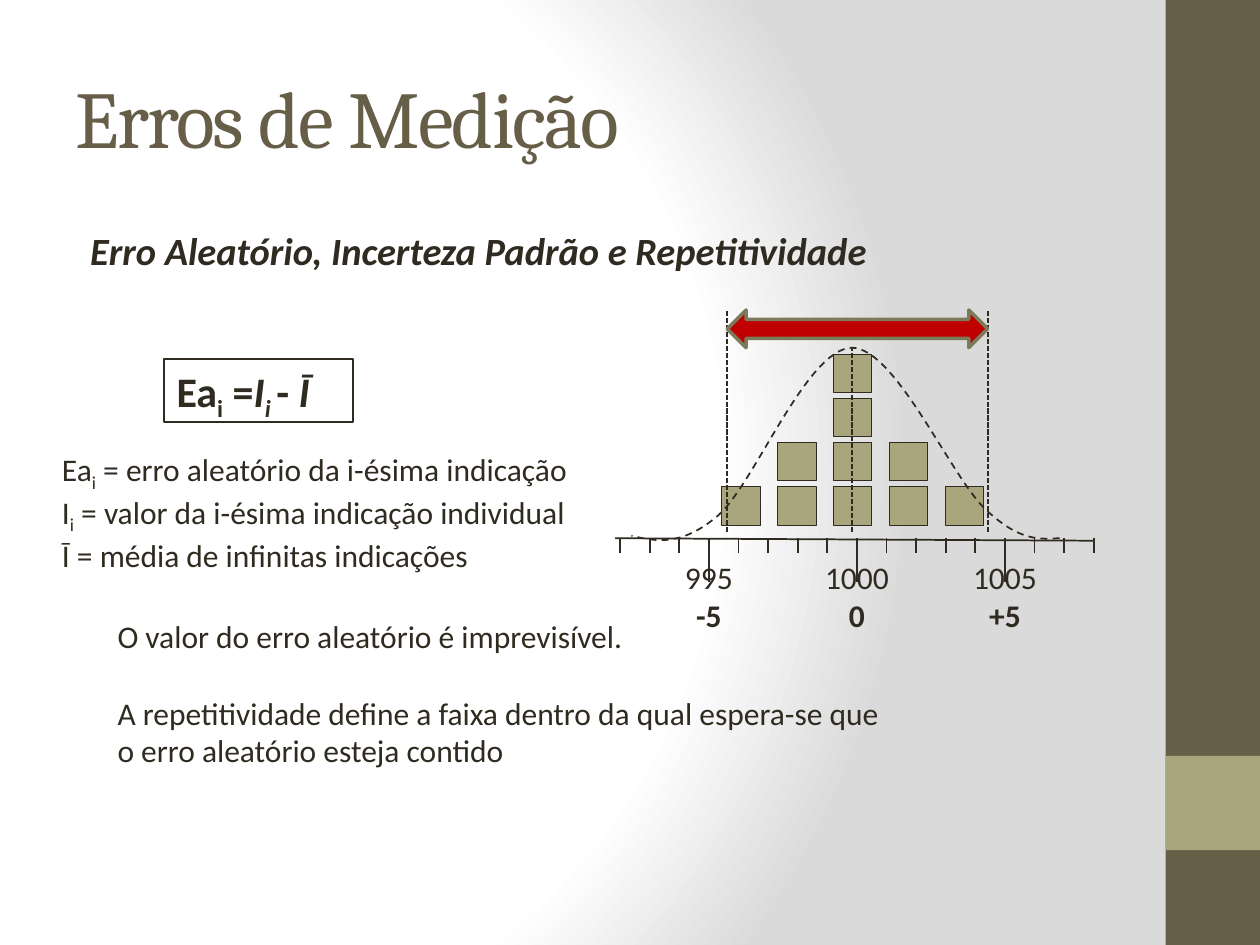
from dataclasses import dataclass

from lxml import etree
from pptx import Presentation, util as u
from pptx.dml.color import RGBColor
from pptx.enum import dml, shapes, text
from pptx.oxml import parse_xml
from pptx.oxml.ns import qn


@dataclass(frozen=True)
class Theme:
    """Colours, fonts and type sizes of the slide."""
    ink: str = "2F2B20"
    brown: str = "675E47"
    olive: str = "A9A57C"
    red: str = "C00000"
    edge: str = "7D7A5C"
    body: str = "Calibri"
    head: str = "Cambria"
    small: int = 18
    lead: int = 22
    math: int = 24
    title: int = 46


T = Theme()
DASH = dml.MSO_LINE.DASH
DOTS = dml.MSO_LINE.SQUARE_DOT
NS = 'xmlns:a="http://schemas.openxmlformats.org/drawingml/2006/main" ' \
     'xmlns:p="http://schemas.openxmlformats.org/presentationml/2006/main"'


def rgb(code):
    """Return a colour from its hex code."""
    return RGBColor.from_string(code)


def pen(line, color=T.ink, width=1, dash=None):
    """Style a line."""
    line.color.rgb = rgb(color)
    line.width = u.Pt(width)
    if dash:
        line.dash_style = dash


def block(slide, kind, box, fill=None, edge=None, width=1):
    """Add a flat preset shape."""
    shape = slide.shapes.add_shape(kind, *map(u.Cm, box))
    shape.shadow.inherit = False
    if fill:
        shape.fill.solid()
        shape.fill.fore_color.rgb = rgb(fill)
    else:
        shape.fill.background()
    if edge:
        pen(shape.line, edge, width)
    else:
        shape.line.fill.background()
    return shape


def rule(slide, start, end, dash=None):
    """Add a straight line between two points."""
    link = slide.shapes.add_connector(
        shapes.MSO_CONNECTOR.STRAIGHT, *map(u.Cm, (*start, *end)))
    pen(link.line, dash=dash)
    etree.SubElement(link._element.spPr, qn("a:effectLst"))


def write(frame, lines, size=T.small, font=T.body, color=T.ink, bold=False,
          italic=None, align=text.PP_ALIGN.LEFT, gap=0, wrap=True):
    """Fill a frame with paragraphs of (words, marks) runs; s is subscript, i italic."""
    frame.word_wrap = wrap
    for n, runs in enumerate(lines):
        para = frame.add_paragraph() if n else frame.paragraphs[0]
        para.alignment = align
        para.space_before = u.Pt(gap if n else 0)
        face = para.font
        face.name, face.size, face.bold, face.italic = font, u.Pt(size), bold, italic
        face.color.rgb = rgb(color)
        for words, marks in runs:
            run = para.add_run()
            run.text = words
            if "s" in marks:
                run._r.get_or_add_rPr().set("baseline", "-25000")
            if "i" in marks:
                run.font.italic = True


def label(slide, box, lines, **style):
    """Add a text box."""
    frame = slide.shapes.add_textbox(*map(u.Cm, box)).text_frame
    write(frame, lines, **style)
    return frame


def backdrop(slide):
    """Paint the radial background."""
    stops = "".join(f'<a:gs pos="{pos}"><a:srgbClr val="{color}"/></a:gs>'
                    for pos, color in ((0, "FFFFFF"), (75000, "FFFFFF"), (100000, "DADADA")))
    slide._element.cSld.insert(0, parse_xml(
        f'<p:bg {NS}><p:bgPr><a:gradFill rotWithShape="1"><a:gsLst>{stops}</a:gsLst>'
        '<a:path path="circle"><a:fillToRect l="20000" t="50000" r="100000" b="50000"/>'
        '</a:path></a:gradFill><a:effectLst/></p:bgPr></p:bg>'))


def sidebar(slide, box):
    """Draw the side band with its square accent."""
    x, y, w, h = box
    rect = shapes.MSO_SHAPE.RECTANGLE
    block(slide, rect, box, T.brown)
    block(slide, rect, (x, y + 0.8 * h, w, w), T.olive)


def heading(slide, box):
    """Write the title and the topic below it."""
    x, y, w, h = box
    frame = label(slide, (x, y, w, 3.18), [[("Erros de Medição", "")]],
                  size=T.title, font=T.head, color=T.brown)
    frame.vertical_anchor = text.MSO_ANCHOR.MIDDLE
    for run in frame.paragraphs[0].runs:
        run._r.get_or_add_rPr().set("spc", "-100")
    label(slide, (x + 0.3, y + 3.69, w - 0.3, h - 3.69),
          [[("Erro Aleatório, Incerteza Padrão e Repetitividade", "")]],
          size=T.lead, bold=True, italic=True)


def notes(slide, box):
    """Write the formula, its terms and the remarks."""
    x, y, w, h = box
    frame = block(slide, shapes.MSO_SHAPE.RECTANGLE, (x + 2.31, y, 3.81, 1.27),
                  edge=T.ink).text_frame
    frame.vertical_anchor = text.MSO_ANCHOR.TOP
    write(frame, [[("Ea", ""), ("i", "s"), (" =", ""), ("I", "i"), ("i ", "si"),
                   ("- ", ""), ("Ῑ", "i")]], size=T.math, bold=True)
    label(slide, (x, y + 1.7, 12.7, 2.57), [
        [("Ea", ""), ("i", "s"), (" = erro aleatório da i-ésima indicação", "")],
        [("I", ""), ("i", "s"), (" = valor da i-ésima indicação individual", "")],
        [("Ῑ = média de infinitas indicações", "")]])
    label(slide, (x + 1.12, y + 5.08, w - 1.12, h - 5.08), [
        [("O valor do erro aleatório é imprevisível.", "")],
        [("A repetitividade define a faixa dentro da qual espera-se que "
          "o erro aleatório esteja contido", "")]], gap=22)


def scale(slide, box):
    """Draw the axis with its ticks and labels."""
    x, y, w, _ = box
    base, step = y + 4.6, (w - 0.1) / 16
    rule(slide, (x, base), (x + w, base + 0.05))
    marks = {3: ("995", "-5"), 8: ("1000", "0"), 13: ("1005", "+5")}
    for n in range(17):
        spot = x + 0.1 + n * step
        rule(slide, (spot, base + (0.88 if n in marks else 0.3)), (spot, base))
        if n in marks:
            frame = label(slide, (spot - 0.9, base + 0.28, 1.8, 1.8),
                          [[(word, "")] for word in marks[n]],
                          align=text.PP_ALIGN.CENTER, wrap=False)
            frame.paragraphs[1].font.bold = True


def stacks(slide, box):
    """Pile up one square for each reading."""
    x, y, _, _ = box
    for col, count in enumerate((1, 2, 4, 2, 1)):
        for row in range(count):
            block(slide, shapes.MSO_SHAPE.FLOWCHART_PROCESS,
                  (x + 2.15 + 1.125 * col, y + 3.56 - 0.89 * row, 0.77, 0.77),
                  T.olive, T.ink, 0.25)


def bell(slide, box):
    """Draw the dashed bell curve from cubic arcs."""
    x, y, _, _ = box
    start = (8.96, 4.6)
    arcs = [((8.56, 4.62), (8.17, 4.67), (7.49, 4.04)),
            ((6.78, 3.4), (5.66, 0.76), (4.77, 0.76)),
            ((3.86, 0.79), (2.81, 3.5), (2.08, 4.14)),
            ((1.34, 4.77), (0.83, 4.67), (0.33, 4.55))]
    knots = [start] + [arc[-1] for arc in arcs]
    left, top = (min(side) for side in zip(*knots))
    pts = [(u.Cm(x + a), u.Cm(y + b)) for a, b in knots]
    build = slide.shapes.build_freeform(*pts[0])
    build.add_line_segments(pts[1:], close=False)
    curve = build.convert_to_shape()
    for line, arc in zip(list(curve._element.iter(qn("a:lnTo"))), arcs):
        line.tag = qn("a:cubicBezTo")
        line.clear()
        for a, b in arc:
            etree.SubElement(line, qn("a:pt"), x=str(int(u.Cm(a - left))),
                             y=str(int(u.Cm(b - top))))
    curve.shadow.inherit = False
    curve.fill.background()
    pen(curve.line, dash=DASH)


def chart(slide, box):
    """Draw the spread of readings and its range."""
    x, y, _, _ = box
    scale(slide, box)
    stacks(slide, box)
    bell(slide, box)
    for spot, top in ((2.26, 0), (4.78, 0.76), (7.51, 0)):
        rule(slide, (x + spot, y + 4.47), (x + spot, y + top), DOTS)
    block(slide, shapes.MSO_SHAPE.LEFT_RIGHT_ARROW, (x + 2.26, y, 5.25, 0.76),
          T.red, T.edge, 2)


def main():
    """Build and save the slide."""
    deck = Presentation()
    deck.slide_width, deck.slide_height = u.Cm(25.4), u.Cm(19.05)
    slide = deck.slides.add_slide(deck.slide_layouts[6])
    backdrop(slide)
    sidebar(slide, (23.5, 0, 1.9, 19.05))
    heading(slide, (1.27, 0.76, 21.16, 5.2))
    notes(slide, (1, 7.24, 17.42, 8.41))
    chart(slide, (12.4, 6.25, 9.65, 6.7))
    deck.save("out.pptx")


if __name__ == "__main__":
    main()
